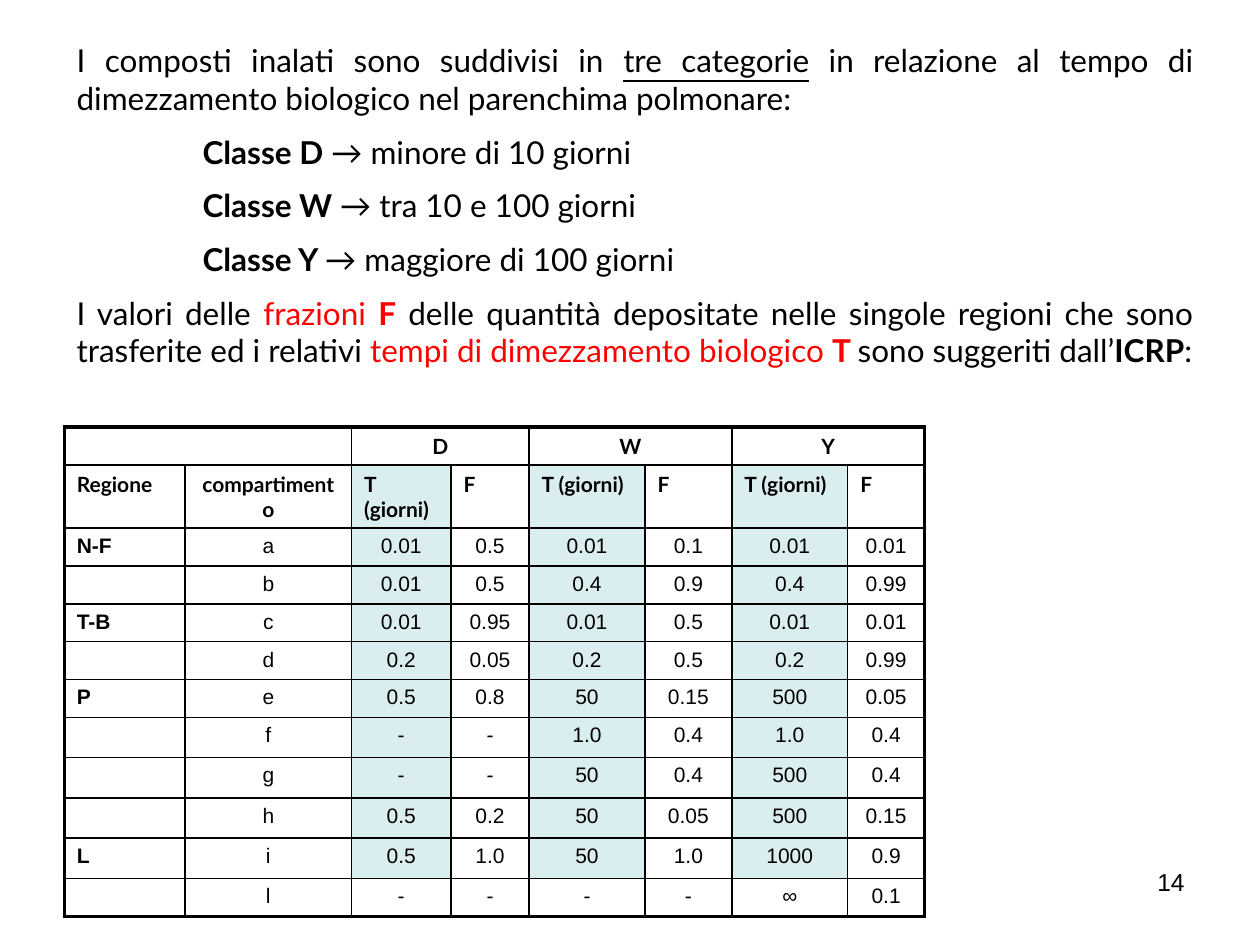
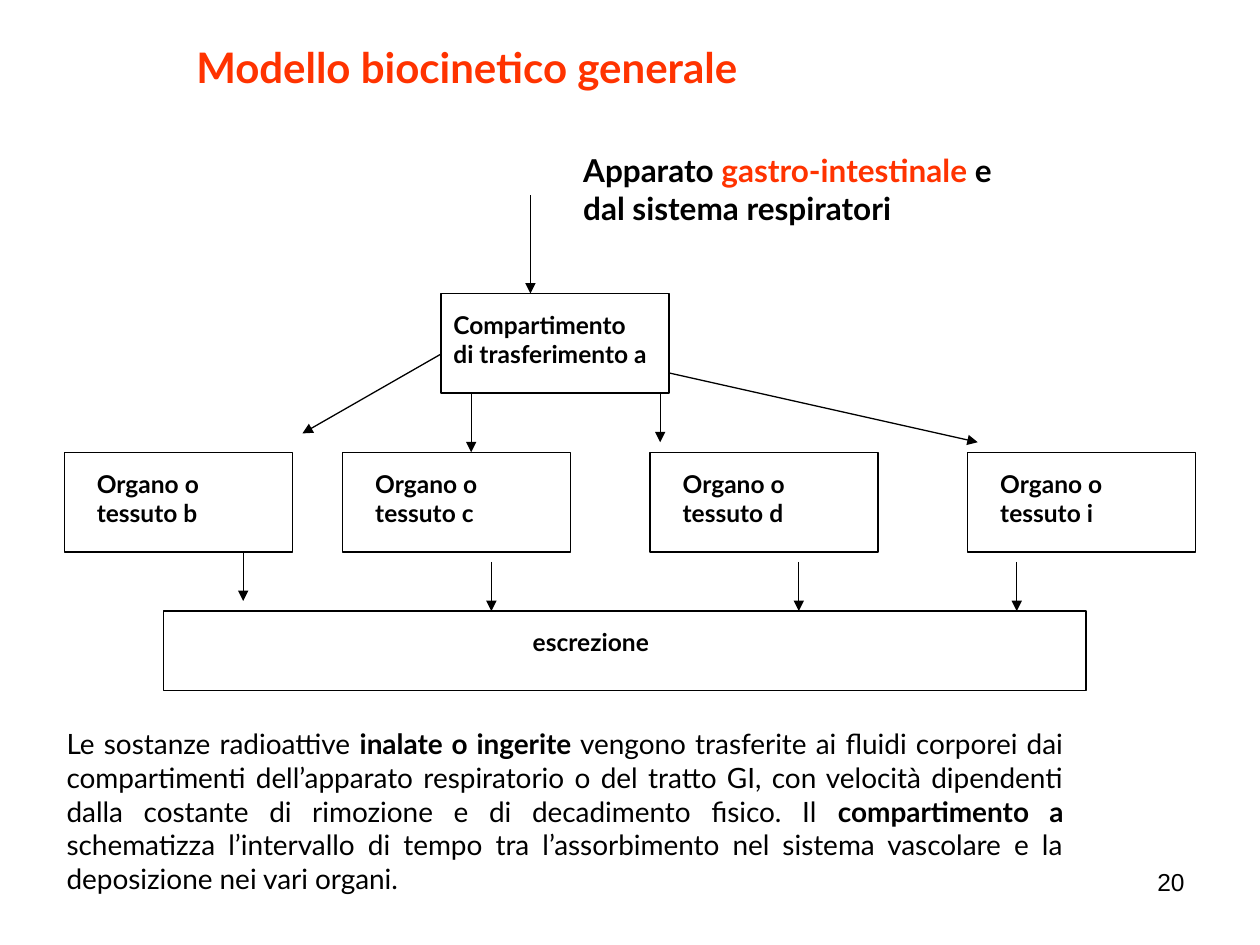
from dataclasses import dataclass
from typing import NamedTuple

from lxml.etree import SubElement
from pptx import Presentation
from pptx.dml.color import RGBColor
from pptx.enum.shapes import MSO_CONNECTOR, MSO_SHAPE
from pptx.enum.text import PP_ALIGN
from pptx.oxml import parse_xml
from pptx.oxml.ns import nsdecls, qn
from pptx.util import Emu, Inches, Pt

# Slide grid: 100 columns by 75 rows
SLIDE_W, SLIDE_H = Inches(10), Inches(7.5)
COL, ROW = SLIDE_W / 100, SLIDE_H / 75

COLORS = {"ink": "000000", "red": "FF0000", "title": "FF3300", "shade": "DAEDEF"}
BODY_FONT, PLAIN_FONT = "Lato", "Arial"
THIN, THICK = Pt(1), Pt(2.25)


class Run(NamedTuple):
    text: str
    bold: bool = False
    color: str = "ink"
    underline: bool = False


@dataclass(frozen=True)
class Para:
    runs: tuple[Run, ...]
    size: float = 14
    font: str = BODY_FONT
    align: PP_ALIGN = PP_ALIGN.LEFT
    indent: float = 0


class Box(NamedTuple):
    x: float
    y: float
    w: float
    h: float

    def emu(self) -> tuple[Emu, ...]:
        return cols(self.x), rows(self.y), cols(self.w), rows(self.h)


class Arrow(NamedTuple):
    x1: float
    y1: float
    x2: float
    y2: float


def cols(n: float) -> Emu:
    return Emu(round(n * COL))


def rows(n: float) -> Emu:
    return Emu(round(n * ROW))


def rgb(name: str) -> RGBColor:
    return RGBColor.from_string(COLORS[name])


# Drawing functions
def fill_para(p, para: Para) -> None:
    p.alignment = para.align
    if para.indent:
        p._p.get_or_add_pPr().set("marL", str(cols(para.indent)))
    for run in para.runs:
        r = p.add_run()
        r.text = run.text
        formats = {"name": para.font, "size": Pt(para.size),
                   "bold": run.bold, "underline": run.underline}
        for key, value in formats.items():
            setattr(r.font, key, value)
        r.font.color.rgb = rgb(run.color)


def add_text(s, box: Box, *paras: Para) -> None:
    tf = s.shapes.add_textbox(*box.emu()).text_frame
    tf.word_wrap = True
    for i, para in enumerate(paras):
        p = tf.add_paragraph() if i else tf.paragraphs[0]
        if i:
            p.space_before = Pt(para.size / 2)
        fill_para(p, para)


def add_page_number(s, number: int) -> None:
    add_text(s, Box(71.7, 68.3, 23.3, 5.2),
             Para((Run(str(number)),), font=PLAIN_FONT, align=PP_ALIGN.RIGHT))


def add_frame(s, box: Box) -> None:
    sp = s.shapes.add_shape(MSO_SHAPE.RECTANGLE, *box.emu())
    sp.shadow.inherit = False
    sp.fill.background()
    sp.line.color.rgb = rgb("ink")
    sp.line.width = Pt(0.75)


def add_arrow(s, a: Arrow) -> None:
    cx = s.shapes.add_connector(MSO_CONNECTOR.STRAIGHT, cols(a.x1), rows(a.y1),
                                cols(a.x2), rows(a.y2))
    cx.line.color.rgb = rgb("ink")
    cx.line.width = Pt(0.75)
    SubElement(cx.line._get_or_add_ln(), qn("a:tailEnd"), type="triangle")
    SubElement(cx._element.spPr, qn("a:effectLst"))


def set_borders(cell, widths: dict[str, int]) -> None:
    tcPr = cell._tc.get_or_add_tcPr()
    for i, (side, width) in enumerate(widths.items()):
        tcPr.insert(i, parse_xml(
            f'<a:ln{side} {nsdecls("a")} w="{width}"><a:solidFill>'
            f'<a:srgbClr val="{COLORS["ink"]}"/></a:solidFill></a:ln{side}>'))


# Slide 1: inhalation classes
CLASSES = (("D", "minore di 10 giorni"), ("W", "tra 10 e 100 giorni"),
           ("Y", "maggiore di 100 giorni"))
COL_WIDTHS = (9.6, 13.2, 7.9, 6.2, 9.2, 6.9, 9.2, 6.1)
ROW_HEIGHTS = (2.9, 4.8, *[3] * 5, *[3.2] * 4, 2.9)
T_COLS = (2, 4, 6)
FRACTIONS = (
    ("", "", "D", "", "W", "", "Y", ""),
    ("Regione", "compartimento", *("T (giorni)", "F") * 3),
    ("N-F", "a", "0.01", "0.5", "0.01", "0.1", "0.01", "0.01"),
    ("", "b", "0.01", "0.5", "0.4", "0.9", "0.4", "0.99"),
    ("T-B", "c", "0.01", "0.95", "0.01", "0.5", "0.01", "0.01"),
    ("", "d", "0.2", "0.05", "0.2", "0.5", "0.2", "0.99"),
    ("P", "e", "0.5", "0.8", "50", "0.15", "500", "0.05"),
    ("", "f", "-", "-", "1.0", "0.4", "1.0", "0.4"),
    ("", "g", "-", "-", "50", "0.4", "500", "0.4"),
    ("", "h", "0.5", "0.2", "50", "0.05", "500", "0.15"),
    ("L", "i", "0.5", "1.0", "50", "1.0", "1000", "0.9"),
    ("", "l", "-", "-", "-", "-", "∞", "0.1"),
)


def add_fraction_table(s) -> None:
    last_row, last_col = len(FRACTIONS) - 1, len(COL_WIDTHS) - 1
    box = Box(5.1, 33.9, sum(COL_WIDTHS), sum(ROW_HEIGHTS))
    table = s.shapes.add_table(last_row + 1, last_col + 1, *box.emu()).table
    table.first_row = table.horz_banding = False
    for column, width in zip(table.columns, COL_WIDTHS):
        column.width = cols(width)
    for row, height in zip(table.rows, ROW_HEIGHTS):
        row.height = rows(height)

    for i, values in enumerate(FRACTIONS):
        for j, value in enumerate(values):
            cell = table.cell(i, j)
            header = i < 2
            left = j == 0 or (i == 1 and j != 1)
            p = cell.text_frame.paragraphs[0]
            if value:
                fill_para(p, Para((Run(value, bold=header or j == 0),), 12,
                                  BODY_FONT if header else PLAIN_FONT,
                                  PP_ALIGN.LEFT if left else PP_ALIGN.CENTER))
            else:
                SubElement(p._p, qn("a:endParaRPr"), sz="1200")
            if j in T_COLS and 0 < i < last_row:
                cell.fill.solid()
                cell.fill.fore_color.rgb = rgb("shade")
            else:
                cell.fill.background()
            right_edge = j + (i == 0 and j % 2 == 0)
            edges = {"L": j == 0, "R": right_edge == last_col,
                     "T": i == 0, "B": i == last_row}
            set_borders(cell, {k: THICK if outer else THIN for k, outer in edges.items()})

    for j in range(0, last_col, 2):
        table.cell(0, j).merge(table.cell(0, j + 1))


def build_classes(s) -> None:
    style = {"size": 18, "align": PP_ALIGN.JUSTIFY}
    intro = Para((
        Run("I composti inalati sono suddivisi in "),
        Run("tre categorie", underline=True),
        Run(" in relazione al tempo di dimezzamento biologico nel parenchima polmonare:"),
    ), **style)
    classes = [Para((Run(f"Classe {name} ", bold=True), Run(f"→ {span}")),
                    indent=10, **style) for name, span in CLASSES]
    outro = Para((
        Run("I valori delle "), Run("frazioni ", color="red"),
        Run("F", bold=True, color="red"),
        Run(" delle quantità depositate nelle singole regioni che sono trasferite "
            "ed i relativi "),
        Run("tempi di dimezzamento biologico ", color="red"),
        Run("T ", bold=True, color="red"),
        Run("sono suggeriti dall’"), Run("ICRP", bold=True), Run(":"),
    ), **style)
    add_page_number(s, 14)
    add_text(s, Box(5.1, 2.8, 90.6, 32.3), intro, *classes, outro)
    add_fraction_table(s)


# Slide 2: biokinetic model
FRAME_W, FRAME_H = 18.1, 7.9
ORGAN_Y, EXCRETION_Y = 35.9, 48.5
ORGANS = {"b": 5.1, "c": 27.2, "d": 51.6, "i": 76.8}
TRANSFER = Box(35, 23.3, FRAME_W, FRAME_H)
TRANSFER_BOTTOM = TRANSFER.y + FRAME_H
ARROWS = (
    Arrow(42.1, 15.5, 42.1, TRANSFER.y),
    Arrow(35, 28.1, 24, 34.4),
    Arrow(37.4, TRANSFER_BOTTOM, 37.4, ORGAN_Y),
    Arrow(53.1, 29.6, 77.6, 35.1),
    Arrow(52.4, TRANSFER_BOTTOM, 52.4, 35.1),
    Arrow(19.3, 43.8, 19.3, 47.7),
    *(Arrow(x, 44.6, x, EXCRETION_Y) for x in (39, 63.4, 80.7)),
)


def label(text: str) -> Para:
    return Para((Run(text, bold=True),))


def build_model(s) -> None:
    add_page_number(s, 20)
    add_text(s, Box(14.6, 2.8, 71.6, 5),
             Para((Run("Modello biocinetico generale", True, "title"),), 24))
    add_text(s, Box(45.3, 11.5, 36.2, 7), Para((
        Run("Apparato ", True), Run("gastro-intestinale", True, "title"),
        Run(" e dal sistema respiratori", True)), 18))

    # Compartments
    add_frame(s, TRANSFER)
    add_text(s, Box(TRANSFER.x, TRANSFER.y + 0.8, 17.4, 5.7),
             label("Compartimento di trasferimento a"))
    for name, x in ORGANS.items():
        add_frame(s, Box(x, ORGAN_Y, FRAME_W, FRAME_H))
        add_text(s, Box(x + 1.6, ORGAN_Y + 0.8, 15.7, 5.7),
                 label(f"Organo o tessuto {name}"))
    add_frame(s, Box(13, EXCRETION_Y, 73.2, 6.3))
    add_text(s, Box(41.3, EXCRETION_Y + 0.8, 15.7, 3.3), label("escrezione"))
    for arrow in ARROWS:
        add_arrow(s, arrow)

    # Explanation
    add_text(s, Box(4.3, 57.2, 81.1, 14.4), Para((
        Run("Le sostanze radioattive "), Run("inalate o ingerite", True),
        Run(" vengono trasferite ai fluidi corporei dai compartimenti dell’apparato "
            "respiratorio o del tratto GI, con velocità dipendenti dalla costante di "
            "rimozione e di decadimento fisico. Il "),
        Run("compartimento a", True),
        Run(" schematizza l’intervallo di tempo tra l’assorbimento nel sistema "
            "vascolare e la deposizione nei vari organi."),
    ), 16, align=PP_ALIGN.JUSTIFY))


def main() -> None:
    prs = Presentation()
    prs.slide_width, prs.slide_height = SLIDE_W, SLIDE_H
    for build in (build_classes, build_model):
        build(prs.slides.add_slide(prs.slide_layouts[6]))
    prs.save("out.pptx")


if __name__ == "__main__":
    main()
